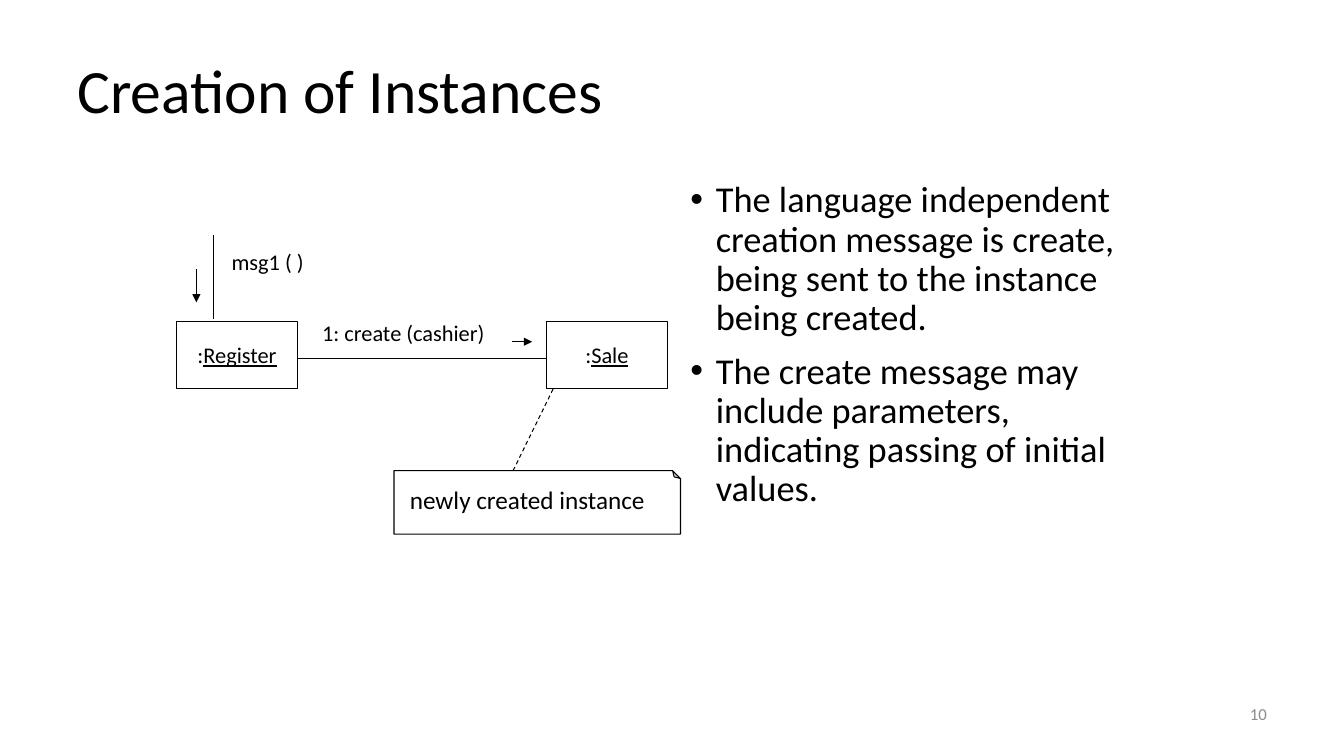
from lxml import etree
from pptx import Presentation
from pptx.dml.color import RGBColor
from pptx.enum.dml import MSO_LINE
from pptx.enum.shapes import MSO_CONNECTOR, MSO_SHAPE
from pptx.enum.text import MSO_ANCHOR, PP_ALIGN
from pptx.oxml.ns import qn
from pptx.util import Cm, Pt

STRAIGHT = MSO_CONNECTOR.STRAIGHT
RECTANGLE = MSO_SHAPE.RECTANGLE
FOLDED_CORNER = MSO_SHAPE.FOLDED_CORNER
DASH = MSO_LINE.DASH
TOP, MIDDLE = MSO_ANCHOR.TOP, MSO_ANCHOR.MIDDLE
LEFT, CENTER, RIGHT = PP_ALIGN.LEFT, PP_ALIGN.CENTER, PP_ALIGN.RIGHT

COLORS = {"ink": "000000", "paper": "FFFFFF", "page_number": "8C8C8C"}
FONT = "Calibri"
LINE_WIDTH = Pt(0.75)
BULLET_INDENT = Cm(0.64)

TITLE_BOX = (1.7, 0.76, 30.48, 3.18)
DIAGRAM_BOX = (4.45, 5.92, 12.7, 7.54)
BULLETS_BOX = (17.15, 4.45, 11.2, 12.57)
NUMBER_BOX = (24.28, 17.35, 7.9, 1.27)

BULLETS = [
    "The language independent creation message is create, being sent to the instance being created.",
    "The create message may include parameters, indicating passing of initial values.",
]


def color(name):
    return RGBColor.from_string(COLORS[name])


def add_span(para, text, size=16, ink="ink", underline=None):
    span = para.add_run()
    span.text = text
    span.font.name = FONT
    span.font.size = Pt(size)
    span.font.color.rgb = color(ink)
    span.font.underline = underline


def add_text(page, box, text, align=LEFT, anchor=TOP, wrap=True, spacing=None, **font):
    frame = page.shapes.add_textbox(*map(Cm, box)).text_frame
    frame.word_wrap = wrap
    frame.vertical_anchor = anchor
    lines = [text] if isinstance(text, str) else text
    for index, line in enumerate(lines):
        para = frame.paragraphs[0] if index == 0 else frame.add_paragraph()
        para.alignment = align
        para.line_spacing = spacing
        add_span(para, line, **font)
    return frame


def add_outline(page, kind, box):
    shape = page.shapes.add_shape(kind, *map(Cm, box))
    shape.shadow.inherit = False
    shape.fill.solid()
    shape.fill.fore_color.rgb = color("paper")
    shape.line.color.rgb = color("ink")
    shape.line.width = LINE_WIDTH
    return shape


def add_instance(page, box, name):
    frame = add_outline(page, RECTANGLE, box).text_frame
    frame.word_wrap = False
    frame.vertical_anchor = MIDDLE
    para = frame.paragraphs[0]
    para.alignment = CENTER
    add_span(para, ":")
    add_span(para, name, underline=True)


def add_note(page, box, text):
    left, top, width, height = box
    note = add_outline(page, FOLDED_CORNER, box)
    properties = note.element.spPr
    properties.xfrm.set("flipV", "1")
    guides = properties.find(qn("a:prstGeom")).get_or_add_avLst()
    etree.SubElement(guides, qn("a:gd"), name="adj", fmla="val 12500")
    add_text(page, (left + 0.15, top + 0.23, 6.5, 1.8), text, wrap=False, size=18)


def add_line(page, start, end, arrow=False, dash=None):
    line = page.shapes.add_connector(STRAIGHT, *map(Cm, start + end))
    line.line.color.rgb = color("ink")
    line.line.width = LINE_WIDTH
    if dash:
        line.line.dash_style = dash
    properties = line.element.spPr
    if arrow:
        etree.SubElement(properties.find(qn("a:ln")), qn("a:tailEnd"), type="triangle")
    etree.SubElement(properties, qn("a:effectLst"))


def add_bullets(page, box):
    frame = add_text(page, box, BULLETS, spacing=0.9, size=26)
    for para in frame.paragraphs:
        para.space_before = Pt(10)
        properties = para._p.get_or_add_pPr()
        properties.set("marL", str(BULLET_INDENT))
        properties.set("indent", str(-BULLET_INDENT))
        etree.SubElement(properties, qn("a:buFont"), typeface="Arial")
        etree.SubElement(properties, qn("a:buChar"), char="•")


def add_diagram(page, box):
    left, top, width, height = box
    instance_width, instance_height = 3.05, 1.68
    instance_top = top + 2.18
    sale_left = left + 9.32
    link_top = top + 3.12
    note_left, note_top = left + 5.48, top + 5.94

    add_instance(page, (left, instance_top, instance_width, instance_height), "Register")
    add_instance(page, (sale_left, instance_top, instance_width, instance_height), "Sale")
    add_line(page, (left + instance_width, link_top), (sale_left, link_top))
    add_line(page, (left + 8.45, top + 2.69), (left + 8.96, top + 2.69), arrow=True)
    add_line(page, (left + 0.93, top), (left + 0.93, top + 2.13))
    add_line(page, (left + 0.5, top + 0.86), (left + 0.5, top + 1.7), arrow=True)
    add_line(page, (left + 8.48, note_top), (left + 9.5, instance_top + instance_height), dash=DASH)
    add_text(page, (left + 1.14, top + 0.2, 2.36, 0.94), "msg1 ( )", wrap=False)
    add_text(page, (left + 3.42, top + 2, 4.65, 0.94), "1: create (cashier)", wrap=False)
    note_box = (note_left, note_top, left + width - note_left, top + height - note_top)
    add_note(page, note_box, "newly created instance")


def main():
    deck = Presentation()
    deck.slide_width, deck.slide_height = Cm(33.87), Cm(19.05)
    page = deck.slides.add_slide(deck.slide_layouts[6])
    add_text(page, NUMBER_BOX, "10", align=RIGHT, anchor=MIDDLE, size=12, ink="page_number")
    add_text(page, TITLE_BOX, "Creation of Instances", anchor=MIDDLE, spacing=0.9, size=44)
    add_bullets(page, BULLETS_BOX)
    add_diagram(page, DIAGRAM_BOX)
    deck.save("out.pptx")


if __name__ == "__main__":
    main()
